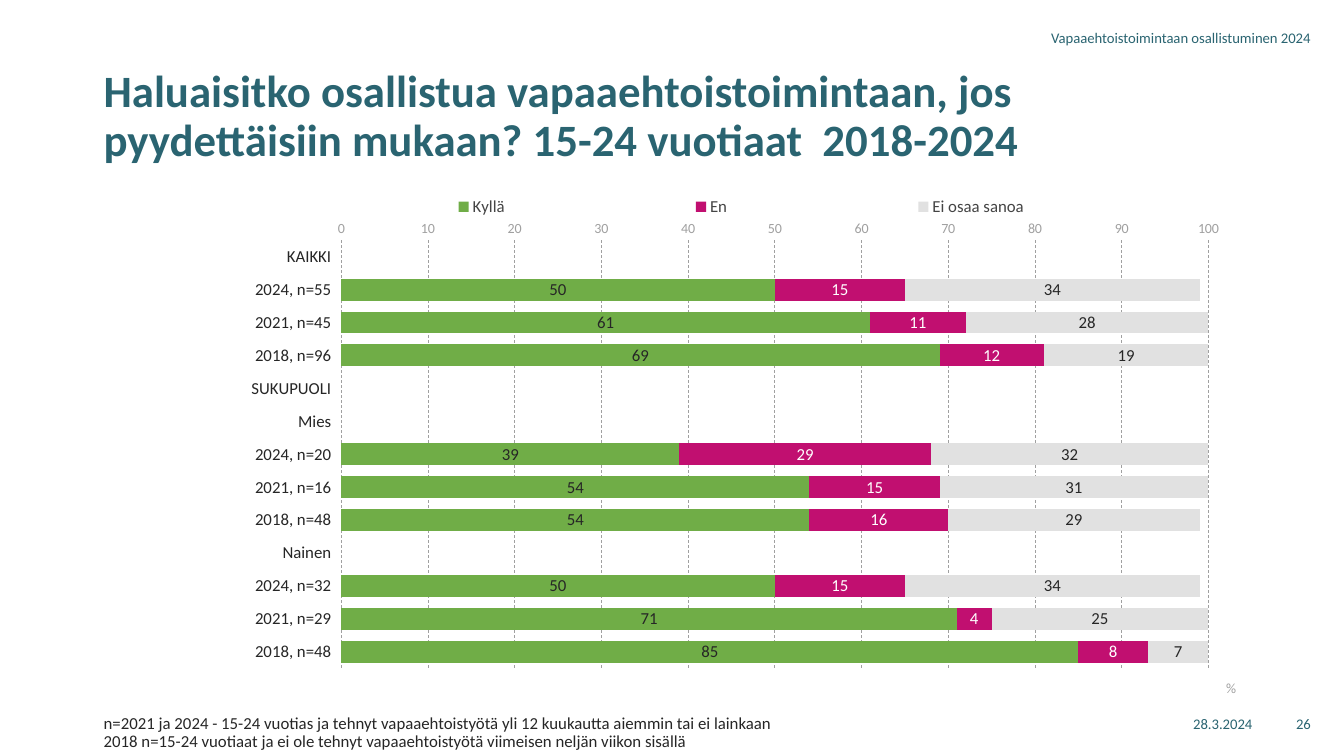
from lxml import etree
from pptx import Presentation
from pptx import util as u
from pptx.chart.data import CategoryChartData
from pptx.dml.color import RGBColor
from pptx.enum import chart as ch, dml, text
from pptx.oxml.ns import qn

TEAL, DARK, GREY, LEGEND_GREY = "2A6471", "262626", "A0A0A0", "444444"

GROUPS = ["KAIKKI", "2024, n=55", "2021, n=45", "2018, n=96",
          "SUKUPUOLI", "Mies", "2024, n=20", "2021, n=16", "2018, n=48",
          "Nainen", "2024, n=32", "2021, n=29", "2018, n=48"]
# answer, bar colour, label colour, percentages
ANSWERS = [
    ("Kyllä", "70AD47", DARK,
     [None, 50, 61, 69, None, None, 39, 54, 54, None, 50, 71, 85]),
    ("En", "C10F70", "FFFFFF",
     [None, 15, 11, 12, None, None, 29, 15, 16, None, 15, 4, 8]),
    ("Ei osaa sanoa", "E1E1E1", DARK,
     [None, 34, 28, 19, None, None, 32, 31, 29, None, 34, 25, 7]),
]


def colour(value):
    return RGBColor.from_string(value)


def place(part, index, inner=False, **fractions):
    """Give a chart part a manual layout, in fractions of the chart area."""
    for old in part.findall(qn("c:layout")):
        part.remove(old)
    layout = etree.Element(qn("c:layout"))
    manual = etree.SubElement(layout, qn("c:manualLayout"))
    settings = [("layoutTarget", "inner")] if inner else []
    settings += [("xMode", "edge"), ("yMode", "edge"), *fractions.items()]
    for name, value in settings:
        etree.SubElement(manual, qn(f"c:{name}")).set("val", str(value))
    part.insert(index, layout)


class SurveySlide:
    font_name = "Calibri"

    def __init__(self, slide):
        self.slide = slide

    def style(self, font, size, tint, bold=False):
        font.name = self.font_name
        font.size = u.Pt(size)
        font.bold = bold
        font.color.rgb = colour(tint)

    def text(self, box, lines, size, tint, bold=False, spacing=None,
             align=text.PP_ALIGN.LEFT, anchor=text.MSO_ANCHOR.TOP):
        frame = self.slide.shapes.add_textbox(*map(u.Inches, box)).text_frame
        frame.word_wrap = True
        frame.vertical_anchor = anchor
        for number, line in enumerate(lines):
            paragraph = frame.add_paragraph() if number else frame.paragraphs[0]
            paragraph.alignment = align
            paragraph.line_spacing = spacing
            run = paragraph.add_run()
            run.text = line
            self.style(run.font, size, tint, bold)

    def margin_note(self, box, line):
        self.text(box, [line], 10.5, TEAL, align=text.PP_ALIGN.RIGHT,
                  anchor=text.MSO_ANCHOR.MIDDLE)

    def stacked_bars(self, box, groups, answers):
        data = CategoryChartData(number_format="General")
        data.categories = groups
        for name, _, _, shares in answers:
            data.add_series(name, shares)
        chart = self.slide.shapes.add_chart(
            ch.XL_CHART_TYPE.BAR_STACKED, *map(u.Inches, box), data).chart
        self.style(chart.font, 12, "3A4A4E")
        chart.has_title = False
        place(chart.plots[0]._element.getparent(), 0, inner=True,
              x=0.214, y=0.126, w=0.75, h=0.808)

        bars = chart.plots[0]
        bars.gap_width, bars.overlap = 50, 100
        bars.vary_by_categories = False
        for series, (_, fill, label_tint, _) in zip(bars.series, answers):
            series.format.fill.solid()
            series.format.fill.fore_color.rgb = colour(fill)
            series.invert_if_negative = False
            labels = series.data_labels
            labels.show_value = True
            labels.position = ch.XL_LABEL_POSITION.CENTER
            labels.number_format = "#,##0"
            labels.number_format_is_linked = False
            self.style(labels.font, 12, label_tint)

        self.legend(chart)
        self.axes(chart)

    def legend(self, chart):
        chart.has_legend = True
        chart.legend.position = ch.XL_LEGEND_POSITION.TOP
        chart.legend.include_in_layout = False
        self.style(chart.legend.font, 12, LEGEND_GREY)
        place(chart.legend._element, 1, x=0.155, y=0.023, w=0.81, h=0.08)

    def axes(self, chart):
        rows, percent = chart.category_axis, chart.value_axis
        for axis, size, tint in ((rows, 12, DARK), (percent, 10, GREY)):
            axis.major_tick_mark = axis.minor_tick_mark = ch.XL_TICK_MARK.NONE
            axis.format.line.fill.background()
            self.style(axis.tick_labels.font, size, tint)
        rows.reverse_order = True
        rows.tick_label_position = ch.XL_TICK_LABEL_POSITION.LOW
        rows.crosses = ch.XL_AXIS_CROSSES.MAXIMUM

        percent.minimum_scale, percent.maximum_scale = 0, 100.01
        percent.major_unit = 10
        percent.tick_labels.number_format = "General"
        percent.tick_labels.number_format_is_linked = False
        percent.has_major_gridlines = True
        grid = percent.major_gridlines.format.line
        grid.color.rgb = colour(GREY)
        grid.width = u.Pt(0.5)
        grid.dash_style = dml.MSO_LINE.DASH

        unit = percent.axis_title.text_frame.paragraphs[0].add_run()
        unit.text = "%"
        self.style(unit.font, 10, GREY)
        place(percent.axis_title._element, 1, x=0.977, y=0.95)


def main():
    deck = Presentation()
    deck.slide_width, deck.slide_height = u.Inches(13.33), u.Inches(7.5)
    page = SurveySlide(deck.slides.add_slide(deck.slide_layouts[6]))

    page.stacked_bars((0.93, 1.72, 11.47, 5.26), GROUPS, ANSWERS)
    page.margin_note((9.52, 6.98, 3, 0.4), "28.3.2024")
    page.margin_note((8.6, 0.17, 4.5, 0.4),
                     "Vapaaehtoistoimintaan osallistuminen 2024")
    page.margin_note((12.66, 6.98, 0.44, 0.4), "26")
    page.text((0.93, 0.62, 11.47, 1.05),
              ["Haluaisitko osallistua vapaaehtoistoimintaan, jos "
               "pyydettäisiin mukaan? 15-24 vuotiaat  2018-2024"],
              32, TEAL, bold=True, spacing=u.Pt(35))
    page.text((0.93, 7.04, 9.18, 0.28),
              ["n=2021 ja 2024 - 15-24 vuotias ja tehnyt vapaaehtoistyötä "
               "yli 12 kuukautta aiemmin tai ei lainkaan",
               "2018 n=15-24 vuotiaat ja ei ole tehnyt vapaaehtoistyötä "
               "viimeisen neljän viikon sisällä"],
              12, DARK, spacing=0.9)
    deck.save("out.pptx")


if __name__ == "__main__":
    main()
